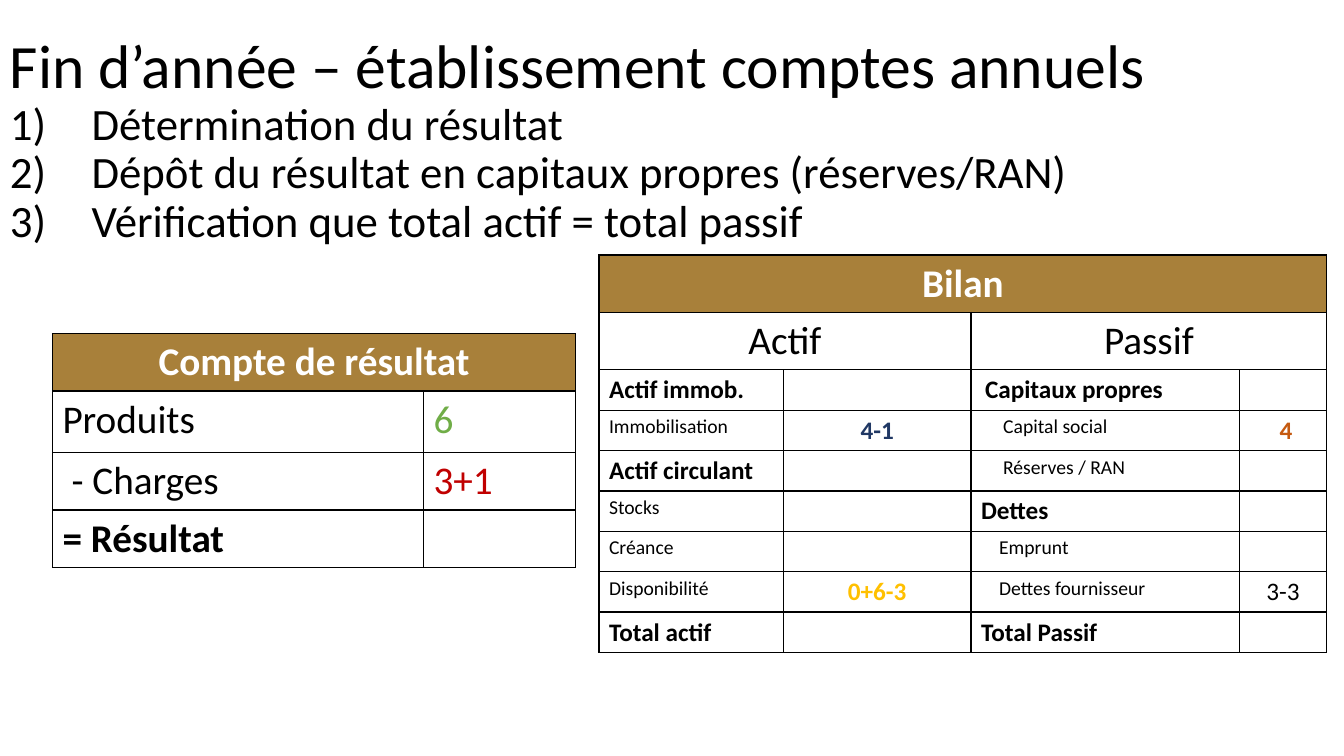
"""Build the year-end accounts slide: three steps, an income statement and a balance sheet."""
import pptx
import pptx.dml.color
import pptx.enum.text
import pptx.oxml
import pptx.oxml.ns
import pptx.util

Inches = pptx.util.Inches
Pt = pptx.util.Pt
RGBColor = pptx.dml.color.RGBColor
CENTER = pptx.enum.text.PP_ALIGN.CENTER
LEFT = pptx.enum.text.PP_ALIGN.LEFT
NS = pptx.oxml.ns.nsdecls("a")

BLACK = RGBColor(0x00, 0x00, 0x00)
WHITE = RGBColor(0xFF, 0xFF, 0xFF)
BRONZE = RGBColor(0xA8, 0x80, 0x3A)
GREEN = RGBColor(0x70, 0xAD, 0x47)
RED = RGBColor(0xC0, 0x00, 0x00)
NAVY = RGBColor(0x20, 0x38, 0x64)
ORANGE = RGBColor(0xC5, 0x5A, 0x11)
GOLD = RGBColor(0xFF, 0xC0, 0x00)

STYLES = {
    "title": (44, False, BLACK, LEFT),
    "step": (32, False, BLACK, LEFT),
    "header": (28, True, WHITE, CENTER),
    "side": (28, False, BLACK, CENTER),
    "line": (28, False, BLACK, LEFT),
    "result": (28, True, BLACK, LEFT),
    "income": (28, False, GREEN, LEFT),
    "expense": (28, False, RED, LEFT),
    "group": (18, True, BLACK, LEFT),
    "item": (14, False, BLACK, LEFT),
    "asset": (18, True, NAVY, CENTER),
    "capital": (18, True, ORANGE, CENTER),
    "cash": (18, True, GOLD, CENTER),
    "debt": (18, False, BLACK, CENTER),
}


def write(p, text, style):
    size, bold, color, p.alignment = STYLES[style]
    r = p.add_run()
    r.text = text
    for name, value in {"name": "Calibri", "size": Pt(size), "bold": bold}.items():
        setattr(r.font, name, value)
    r.font.color.rgb = color


def add_grid(s, left, top, cols, rows, merges, cells):
    width, height = Inches(sum(cols)), Inches(sum(rows))
    table = s.shapes.add_table(len(rows), len(cols), Inches(left), Inches(top), width, height).table
    for name in ("first_row", "horz_banding"):
        setattr(table, name, False)
    for col, size in zip(table.columns, cols):
        col.width = Inches(size)
    for row, size in zip(table.rows, rows):
        row.height = Inches(size)
    for cell in table.iter_cells():
        tc_pr = cell._tc.get_or_add_tcPr()
        for side in "LRTB":
            tc_pr.append(pptx.oxml.parse_xml(
                f'<a:ln{side} {NS} w="12700"><a:solidFill><a:srgbClr val="{BLACK}"/></a:solidFill></a:ln{side}>'))
        cell.fill.background()
    for row, first, last in merges:
        table.cell(row, first).merge(table.cell(row, last))
    for (row, col), (text, style, *indent) in cells.items():
        cell = table.cell(row, col)
        cell.margin_left = Inches(0.1 + sum(indent))
        write(cell.text_frame.paragraphs[0], text, style)
        if style == "header":
            cell.fill.solid()
            cell.fill.fore_color.rgb = BRONZE


prs = pptx.Presentation()
prs.slide_width = Inches(13.33)
prs.slide_height = Inches(7.5)
s = prs.slides.add_slide(prs.slide_layouts[6])

tf = s.shapes.add_textbox(Inches(0), Inches(0.3), Inches(12.95), Inches(2.12)).text_frame
tf.word_wrap = True
p = tf.paragraphs[0]
p.line_spacing = 0.9
write(p, "Fin d’année – établissement comptes annuels", "title")
for step in (
    "Détermination du résultat",
    "Dépôt du résultat en capitaux propres (réserves/RAN)",
    "Vérification que total actif = total passif",
):
    p = tf.add_paragraph()
    p_pr = p._p.get_or_add_pPr()
    p_pr.set("marL", str(Inches(0.81)))
    p_pr.set("indent", str(-Inches(0.81)))
    p_pr.append(pptx.oxml.parse_xml(f'<a:buAutoNum {NS} type="arabicParenR"/>'))
    p.line_spacing = 0.9
    write(p, step, "step")

add_grid(s, 0.52, 3.31, [3.68, 1.51], [0.57, 0.61, 0.57, 0.57], [(0, 0, 1)], {
    (0, 0): ("Compte de résultat", "header"),
    (1, 0): ("Produits", "line"),
    (1, 1): ("6", "income"),
    (2, 0): ("- Charges", "line", 0.09),
    (2, 1): ("3+1", "expense"),
    (3, 0): ("= Résultat", "result"),
})

add_grid(s, 5.94, 2.53, [1.83, 1.86, 2.66, 0.87], [0.57] * 2 + [0.4] * 7,
         [(0, 0, 3), (1, 0, 1), (1, 2, 3)], {
    (0, 0): ("Bilan", "header"),
    (1, 0): ("Actif", "side"),
    (1, 2): ("Passif", "side"),
    (2, 0): ("Actif immob.", "group"),
    (2, 2): ("Capitaux propres", "group", 0.04),
    (3, 0): ("Immobilisation", "item"),
    (3, 1): ("4-1", "asset"),
    (3, 2): ("Capital social", "item", 0.22),
    (3, 3): ("4", "capital", 0.06),
    (4, 0): ("Actif circulant", "group"),
    (4, 2): ("Réserves / RAN", "item", 0.22),
    (5, 0): ("Stocks", "item"),
    (5, 2): ("Dettes", "group"),
    (6, 0): ("Créance", "item"),
    (6, 2): ("Emprunt", "item", 0.18),
    (7, 0): ("Disponibilité", "item"),
    (7, 1): ("0+6-3", "cash"),
    (7, 2): ("Dettes fournisseur", "item", 0.18),
    (7, 3): ("3-3", "debt"),
    (8, 0): ("Total actif", "group"),
    (8, 2): ("Total Passif", "group"),
})

prs.save("out.pptx")
